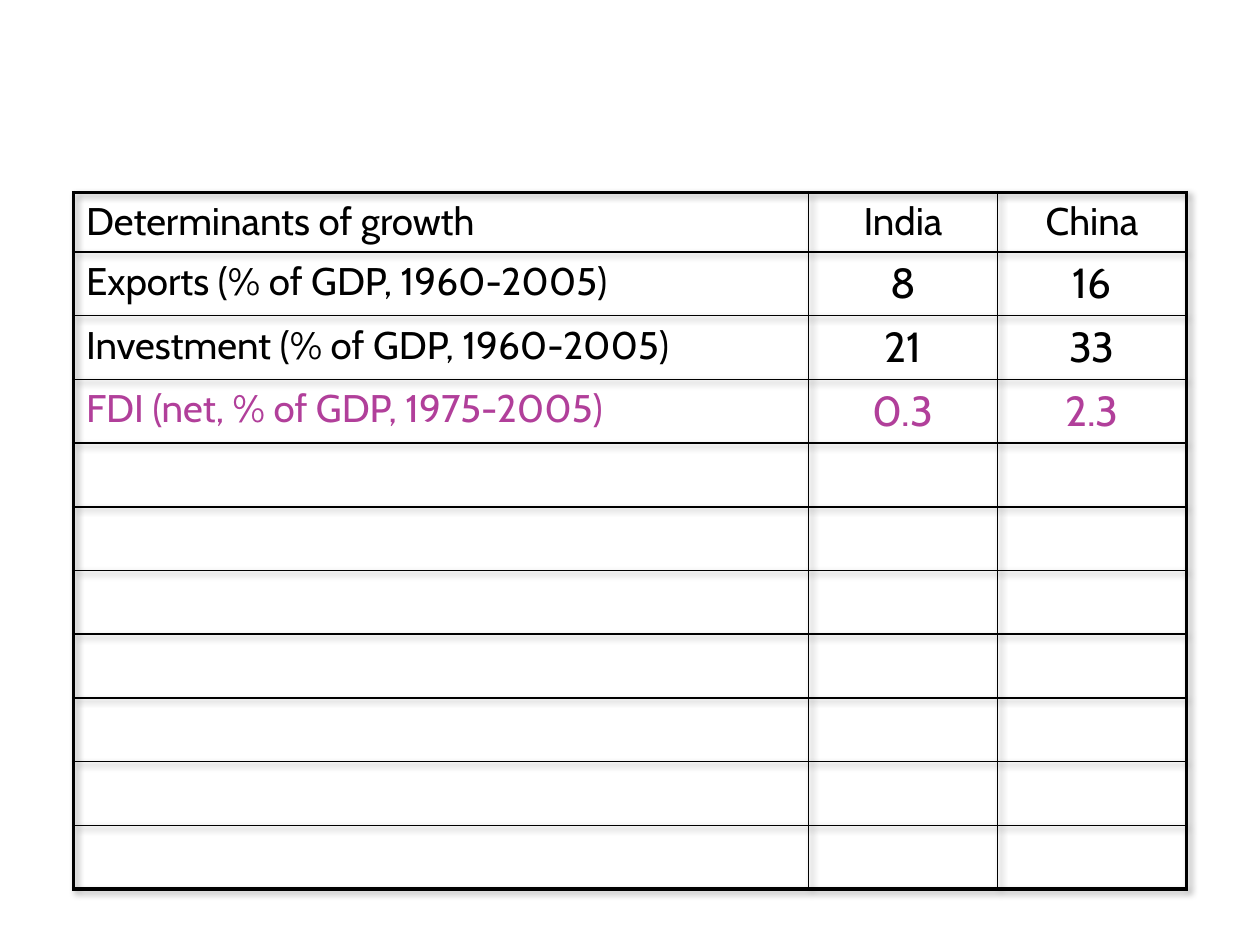
from lxml.etree import SubElement
from pptx import Presentation
from pptx.dml.color import RGBColor
from pptx.enum.text import PP_ALIGN
from pptx.oxml import parse_xml
from pptx.oxml.ns import nsdecls, qn
from pptx.util import Pt

BLACK = RGBColor(0, 0, 0)
PURPLE = RGBColor(0xB1, 0x3F, 0x9A)
FONT = "Cabin"


def border(cell, side, width):
    props = cell._tc.get_or_add_tcPr()
    line = SubElement(props, qn(f"a:ln{side}"), w=str(Pt(width)))
    fill = SubElement(line, qn("a:solidFill"))
    SubElement(fill, qn("a:srgbClr"), val=str(BLACK))


prs = Presentation()
prs.slide_width, prs.slide_height = Pt(720), Pt(540)
slide = prs.slides.add_slide(prs.slide_layouts[6])

data = [
    ("Determinants of growth", "India", "China"),
    ("Exports (% of GDP, 1960-2005)", "8", "16"),
    ("Investment (% of GDP, 1960-2005)", "21", "33"),
    ("FDI (net, % of GDP, 1975-2005)", "0.3", "2.3"),
] + [("", "", "")] * 7
widths = [420, 108, 108]
heights = [33.9] + [36.4] * 10
last_row, last_col = len(data) - 1, len(widths) - 1

table = slide.shapes.add_table(
    len(data), len(widths), Pt(42), Pt(110), Pt(sum(widths)), Pt(sum(heights))
).table
table.first_row = table.horz_banding = False
table._tbl.tblPr.insert(0, parse_xml(
    f'<a:effectLst {nsdecls("a")}>'
    f'<a:outerShdw blurRad="{Pt(4)}" dist="{Pt(3)}" dir="2700000">'
    '<a:srgbClr val="000000"><a:alpha val="35000"/></a:srgbClr>'
    '</a:outerShdw></a:effectLst>'
))
for col, width in zip(table.columns, widths):
    col.width = Pt(width)

for r, texts in enumerate(data):
    table.rows[r].height = Pt(heights[r])
    for c, text in enumerate(texts):
        cell = table.cell(r, c)
        edges = {"L": c == 0, "R": c == last_col, "T": r == 0, "B": r == last_row}
        for side, outer in edges.items():
            border(cell, side, 2.25 if outer else 1)
        cell.fill.background()
        if not text:
            continue
        cell.text = text
        para = cell.text_frame.paragraphs[0]
        para.alignment = PP_ALIGN.CENTER if c else PP_ALIGN.LEFT
        para.font.name = FONT
        para.font.size = Pt(24 if r and c else 22)
        para.font.color.rgb = PURPLE if r == 3 else BLACK

prs.save("out.pptx")
